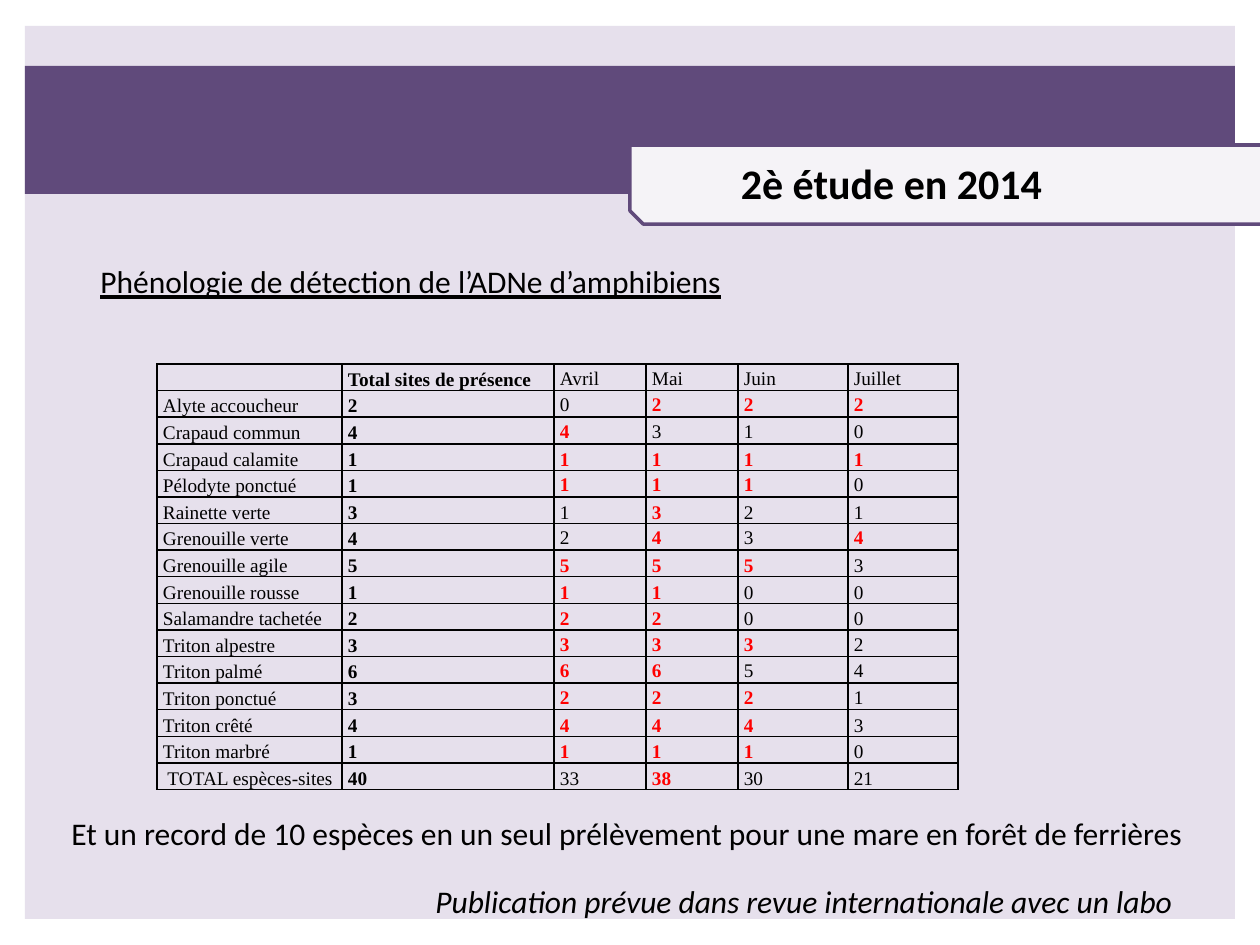
from lxml import etree
from pptx import Presentation
from pptx import util as u
from pptx.dml.color import RGBColor
from pptx.enum import shapes, text
from pptx.oxml.ns import qn

PX = 914400 / 126
PURPLE, LILAC, PALE = "604A7B", "E6E0EC", "F5F3F7"
BLACK, RED = "000000", "FF0000"

HEADER = ["", "Total sites de présence", "Avril", "Mai", "Juin", "Juillet"]
COUNTS = [  # species, total sites, then April to July
    ("Alyte accoucheur", 2, 0, 2, 2, 2),
    ("Crapaud commun", 4, 4, 3, 1, 0),
    ("Crapaud calamite", 1, 1, 1, 1, 1),
    ("Pélodyte ponctué", 1, 1, 1, 1, 0),
    ("Rainette verte", 3, 1, 3, 2, 1),
    ("Grenouille verte", 4, 2, 4, 3, 4),
    ("Grenouille agile", 5, 5, 5, 5, 3),
    ("Grenouille rousse", 1, 1, 1, 0, 0),
    ("Salamandre tachetée", 2, 2, 2, 0, 0),
    ("Triton alpestre", 3, 3, 3, 3, 2),
    ("Triton palmé", 6, 6, 6, 5, 4),
    ("Triton ponctué", 3, 2, 2, 2, 1),
    ("Triton crêté", 4, 4, 4, 4, 3),
    ("Triton marbré", 1, 1, 1, 1, 0),
    (" TOTAL espèces-sites", 40, 33, 38, 30, 21),
]
COLUMN_WIDTHS = [185, 212, 92, 92, 110, 110]
MIDDLE_ROWS = {0, 1, 2, 4, 6, 10, 11, 12}  # months centred vertically


def px(length):
    return u.Emu(round(length * PX))


def rgb(color):
    return RGBColor.from_string(color)


class SlideBuilder:
    body_font = "Calibri"
    table_font = "Times New Roman"
    table_size = 11

    def __init__(self, slide):
        self.slide = slide

    def format(self, paragraph, font, size, color=BLACK, bold=False, italic=False, underline=False):
        for run in paragraph.runs:
            run.font.name = font
            run.font.size = u.Pt(size)
            run.font.color.rgb = rgb(color)
            run.font.bold = bold
            run.font.italic = italic
            run.font.underline = underline

    def panel(self, kind, left, top, width, height, fill, line=None):
        shape = self.slide.shapes.add_shape(kind, px(left), px(top), px(width), px(height))
        shape.shadow.inherit = False
        shape.fill.solid()
        shape.fill.fore_color.rgb = rgb(fill)
        if line:
            shape.line.color.rgb = rgb(line)
            shape.line.width = u.Pt(2)
        else:
            shape.line.fill.background()

    def label(self, words, left, top, width, height, size=18, align=text.PP_ALIGN.LEFT, **style):
        box = self.slide.shapes.add_textbox(px(left), px(top), px(width), px(height))
        frame = box.text_frame
        frame.word_wrap = True
        frame.auto_size = text.MSO_AUTO_SIZE.SHAPE_TO_FIT_TEXT
        frame.text = words
        paragraph = frame.paragraphs[0]
        paragraph.alignment = align
        self.format(paragraph, self.body_font, size, **style)

    def border(self, cell):
        properties = cell._tc.get_or_add_tcPr()
        for position, side in enumerate(("lnL", "lnR", "lnT", "lnB")):
            line = etree.Element(qn(f"a:{side}"), w=str(u.Pt(1)))
            fill = etree.SubElement(line, qn("a:solidFill"))
            etree.SubElement(fill, qn("a:srgbClr"), val=BLACK)
            properties.insert(position, line)

    def cell(self, cell, value, anchor, color=BLACK, bold=False):
        cell.fill.background()
        cell.margin_left = cell.margin_right = px(6)
        cell.margin_top = cell.margin_bottom = 0
        cell.vertical_anchor = anchor
        cell.text_frame.text = str(value)
        paragraph = cell.text_frame.paragraphs[0]
        paragraph.alignment = text.PP_ALIGN.JUSTIFY
        paragraph.line_spacing = 1.15
        self.format(paragraph, self.table_font, self.table_size, color, bold)
        if value == "":  # keeps the empty cell from stretching its row
            paragraph._p.get_or_add_endParaRPr().set("sz", str(self.table_size * 100))
        self.border(cell)

    def table(self, rows, left, top, height, widths):
        frame = self.slide.shapes.add_table(
            len(rows), len(widths), px(left), px(top), px(sum(widths)), px(height))
        table = frame.table
        table.first_row = table.horz_banding = False
        for column, width in zip(table.columns, widths):
            column.width = px(width)
        for r, row in enumerate(rows):
            table.rows[r].height = px(height / len(rows))
            for c, value in enumerate(row):
                month = c >= 2
                # The best month or months of each row stand out in red
                best = month and r > 0 and value == max(row[2:])
                middle = month and r in MIDDLE_ROWS
                self.cell(table.cell(r, c), value,
                          text.MSO_ANCHOR.MIDDLE if middle else text.MSO_ANCHOR.BOTTOM,
                          RED if best else BLACK, bold=best or c == 1)


def main():
    presentation = Presentation()
    presentation.slide_width, presentation.slide_height = px(1260), px(945)
    builder = SlideBuilder(presentation.slides.add_slide(presentation.slide_layouts[6]))

    # Background, band and title tab
    kinds = shapes.MSO_SHAPE
    builder.panel(kinds.RECTANGLE, 25, 26, 1210, 893, LILAC)
    builder.panel(kinds.RECTANGLE, 25, 66, 1210, 128, PURPLE)
    builder.panel(kinds.SNIP_2_DIAG_RECTANGLE, 630, 145, 655, 79, PALE, line=PURPLE)

    # Title and subtitle
    builder.label("2è étude en 2014", 601, 151, 581, 63, size=24,
                  align=text.PP_ALIGN.CENTER, bold=True)
    builder.label("Phénologie de détection de l’ADNe d’amphibiens", 88, 256, 994, 50,
                  underline=True)

    # Detections by species and month
    builder.table([HEADER] + COUNTS, 157, 364, 425, COLUMN_WIDTHS)

    # Closing remarks
    builder.label("Et un record de 10 espèces en un seul prélèvement pour une mare "
                  "en forêt de ferrières", 59, 808, 1162, 50)
    builder.label("Publication prévue dans revue internationale avec un labo",
                  423, 876, 837, 50, italic=True)

    presentation.save("out.pptx")


if __name__ == "__main__":
    main()
